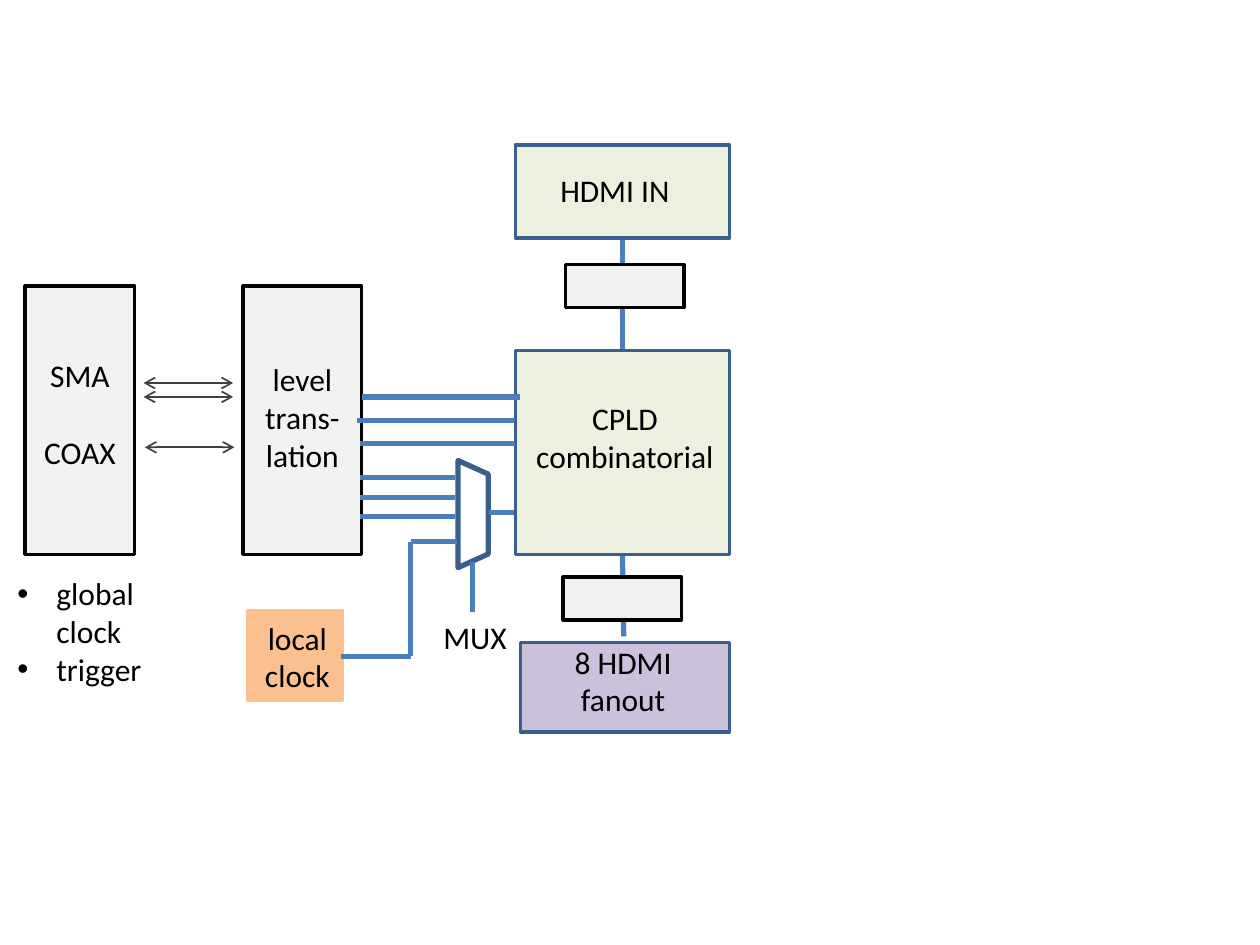
import pptx
import pptx.util
import pptx.dml.color
import pptx.enum.shapes
import pptx.enum.text
import pptx.oxml.ns
from lxml import etree

RGB = pptx.dml.color.RGBColor
SHAPE = pptx.enum.shapes.MSO_SHAPE
ALIGN = pptx.enum.text.PP_ALIGN
qn = pptx.oxml.ns.qn

PX = 9144  # one px is a hundredth of an inch
BLACK = RGB(0x00, 0x00, 0x00)
GREY = RGB(0xF2, 0xF2, 0xF2)
DARK = RGB(0x40, 0x40, 0x40)
BLUE = RGB(0x4B, 0x7E, 0xBC)
NAVY = RGB(0x3A, 0x5F, 0x8C)
GREEN = RGB(0xEB, 0xF1, 0xDE)
PURPLE = RGB(0xCC, 0xC1, 0xDA)
ORANGE = RGB(0xFA, 0xC0, 0x90)

FRAME = {
    "word_wrap": True,
    "auto_size": pptx.enum.text.MSO_AUTO_SIZE.SHAPE_TO_FIT_TEXT,
    "vertical_anchor": pptx.enum.text.MSO_ANCHOR.TOP,
}
FONT = {"name": "Calibri", "size": pptx.util.Pt(18)}


def apply(item, values):
    for name, value in values.items():
        setattr(item, name, value)


def place(box, left, top, width, height):
    """Turn a place inside a box into EMU on the slide."""
    return [n * PX for n in (box[0] + left, box[1] + top, width, height)]


def add_box(slide, box, spot, fill, edge, weight=2, kind=SHAPE.RECTANGLE):
    shape = slide.shapes.add_shape(kind, *place(box, *spot))
    shape.shadow.inherit = False
    if fill is None:
        shape.fill.background()
    else:
        shape.fill.solid()
        shape.fill.fore_color.rgb = fill
    shape.line.color.rgb = edge
    shape.line.width = pptx.util.Pt(weight)
    return shape


def add_text(slide, box, spot, *paras, align=ALIGN.CENTER):
    frame = slide.shapes.add_textbox(*place(box, *spot)).text_frame
    apply(frame, FRAME)
    for i, text in enumerate(paras):
        para = frame.add_paragraph() if i else frame.paragraphs[0]
        para.text = text
        para.alignment = align
        for run in para.runs:
            apply(run.font, FONT)
            run.font.color.rgb = BLACK
    return frame.paragraphs


def add_line(slide, box, start, end, color=BLUE, weight=3, arrows=False):
    points = [(box[i] + p[i]) * PX for p in (start, end) for i in (0, 1)]
    line = slide.shapes.add_connector(
        pptx.enum.shapes.MSO_CONNECTOR.STRAIGHT, *points)
    line.line.color.rgb = color
    line.line.width = pptx.util.Pt(weight)
    if arrows:
        edge = line.line._get_or_add_ln()
        for tag in ("a:headEnd", "a:tailEnd"):
            etree.SubElement(edge, qn(tag), type="arrow")
    etree.SubElement(line._element.spPr, qn("a:effectLst"))


def add_bullet(para):
    props = para._p.get_or_add_pPr()
    indent = 31 * PX
    props.set("marL", str(indent))
    props.set("indent", str(-indent))
    etree.SubElement(props, qn("a:buFont"), typeface="Arial")
    etree.SubElement(props, qn("a:buChar"), char="•")


def draw_inputs(slide, box):
    """Plugs, level translation and the arrows between them."""
    add_box(slide, box, (173, 0, 94, 213), GREY, BLACK)
    add_text(slide, box, (173, 54, 94, 101), "level", "trans-lation")
    add_box(slide, box, (0, 0, 87, 213), GREY, BLACK)
    plugs = add_text(slide, box, (0, 51, 87, 101), "SMA", "COAX")
    plugs[1].space_before = pptx.util.Pt(22)
    for x, y in ((94, 77), (95, 128), (94, 88)):
        add_line(slide, box, (x, y), (x + 71, y), DARK, 1, True)
    notes = add_text(slide, box, (-16, 224, 126, 101),
                     "global clock", "trigger", align=ALIGN.LEFT)
    for para in notes:
        add_bullet(para)


def draw_mux(slide, box):
    """Local clock and multiplexer with their wires."""
    add_box(slide, box, (12, 120, 75, 71), ORANGE, ORANGE)
    add_text(slide, box, (0, 121, 102, 71), "local clock")
    mux = add_box(slide, box, (148, 31, 85, 24), None, NAVY, 3,
                  SHAPE.TRAPEZOID)
    mux.adjustments[0] = 0.45
    mux.rotation = 90
    for y in (14, 30, 45):
        add_line(slide, box, (101, y), (176, y))
    wires = (
        ((203, 42), (231, 42)),
        ((190, 121), (190, 81)),
        ((86, 156), (141, 156)),
        ((141, 65), (178, 65)),
        ((141, 156), (141, 65)),
    )
    for start, end in wires:
        add_line(slide, box, start, end)
    add_text(slide, box, (141, 121, 102, 40), "MUX")


def draw_chain(slide, box):
    """HDMI input, CPLD and fanout, linked from top to bottom."""
    add_line(slide, box, (86, 390), (85, 325))
    add_line(slide, box, (85, 163), (85, 74))
    add_box(slide, box, (4, 395, 166, 71), PURPLE, NAVY)
    add_text(slide, box, (-2, 390, 175, 71), "8 HDMI\vfanout")
    add_box(slide, box, (0, 0, 170, 74), GREEN, NAVY)
    add_text(slide, box, (-7, 16, 172, 40), "HDMI IN")
    add_box(slide, box, (0, 163, 170, 162), GREEN, NAVY)
    add_text(slide, box, (4, 197, 166, 100), "CPLD", "combinatorial")
    for x, y in ((40, 95), (38, 343)):
        add_box(slide, box, (x, y, 94, 34), GREY, BLACK)


def draw_bus(slide, box):
    """Wires from level translation to the CPLD."""
    for x, y, length in ((3, 37, 123), (0, 19, 126), (4, 0, 126)):
        add_line(slide, box, (x, y), (x + length, y))


def main():
    deck = pptx.Presentation()
    apply(deck, {"slide_width": 1000 * PX, "slide_height": 750 * PX})
    slide = deck.slides.add_slide(deck.slide_layouts[6])
    draw_inputs(slide, (20, 227))
    draw_mux(slide, (185, 365))
    draw_chain(slide, (409, 115))
    draw_bus(slide, (283, 315))
    deck.save("out.pptx")


if __name__ == "__main__":
    main()
